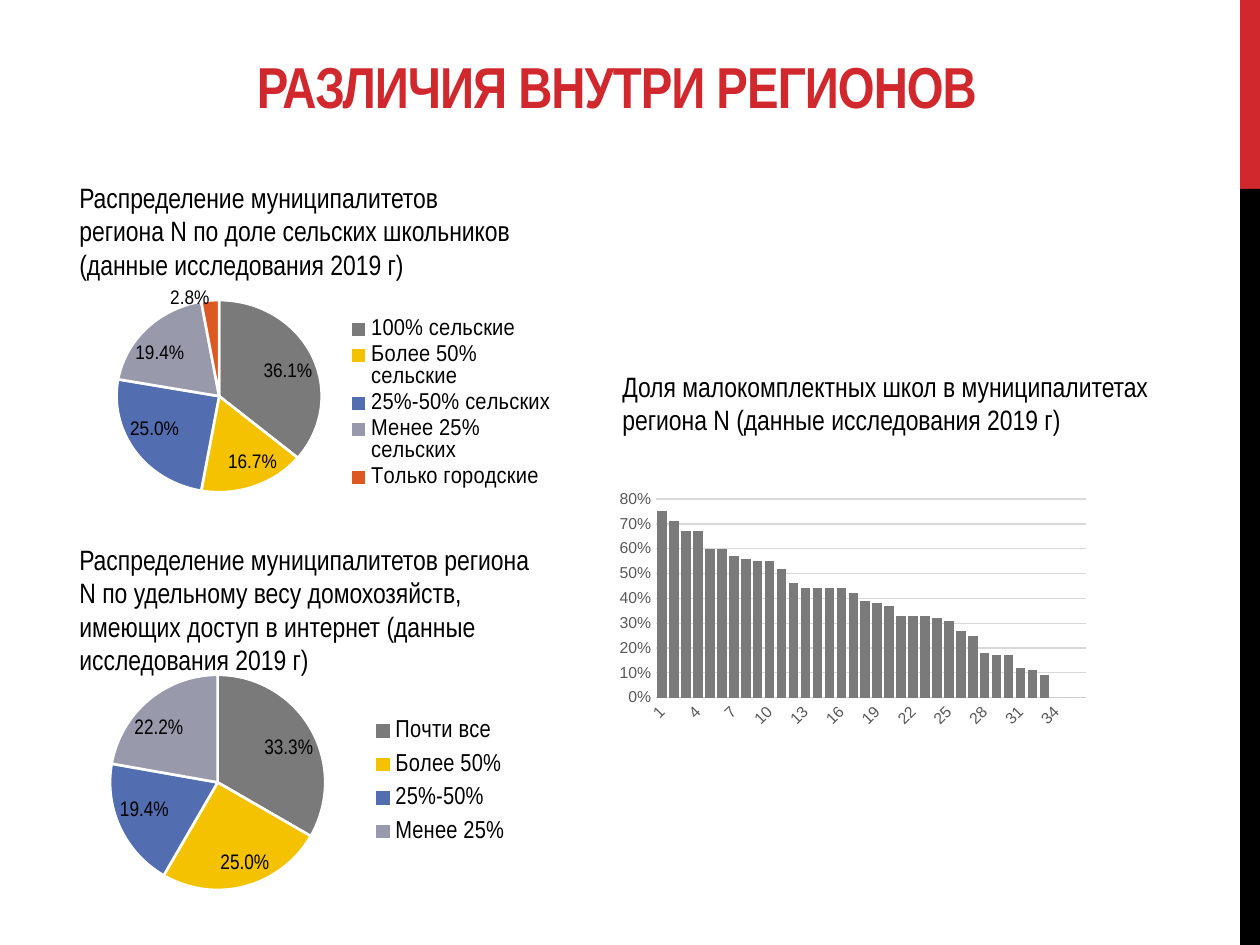
from lxml import etree
from pptx import Presentation
from pptx.chart.data import CategoryChartData
from pptx.dml.color import RGBColor
from pptx.enum.chart import XL_CHART_TYPE, XL_LABEL_POSITION, XL_LEGEND_POSITION, XL_TICK_MARK
from pptx.enum.shapes import MSO_SHAPE
from pptx.enum.text import MSO_ANCHOR, PP_ALIGN
from pptx.oxml.ns import qn
from pptx.util import Emu, Pt

PIE = XL_CHART_TYPE.PIE
COLUMN = XL_CHART_TYPE.COLUMN_CLUSTERED
BEST_FIT = XL_LABEL_POSITION.BEST_FIT
RIGHT = XL_LEGEND_POSITION.RIGHT
NO_TICK = XL_TICK_MARK.NONE
RECTANGLE = MSO_SHAPE.RECTANGLE
BOTTOM = MSO_ANCHOR.BOTTOM
CENTER = PP_ALIGN.CENTER

SCALE = 914400 / 126
NARROW = "Arial Narrow"
RED, BLACK, WHITE = "D1282E", "000000", "FFFFFF"
GRAY, GRID, AXIS_TEXT = "7A7A7A", "D9D9D9", "595959"
SLICES = [GRAY, "F5C201", "526DB0", "989AAC", "DC5924"]


def paint(color, value):
    color.rgb = RGBColor.from_string(value)


def set_layout(parent, index, frame, inner=False):
    for old in parent.findall(qn("c:layout")):
        parent.remove(old)
    layout = etree.Element(qn("c:layout"))
    manual = etree.SubElement(layout, qn("c:manualLayout"))
    settings = [("layoutTarget", "inner")] if inner else []
    settings += [("xMode", "edge"), ("yMode", "edge")]
    settings += zip("xywh", frame)
    for tag, value in settings:
        etree.SubElement(manual, qn("c:" + tag)).set("val", str(value))
    parent.insert(index, layout)


deck = Presentation()
deck.slide_width = Emu(round(1260 * SCALE))
deck.slide_height = Emu(round(945 * SCALE))
page = deck.slides.add_slide(deck.slide_layouts[5])

for top, height, color in [(0, 189, RED), (189, 756, BLACK)]:
    place = [Emu(round(n * SCALE)) for n in (1240, top, 20, height)]
    band = page.shapes.add_shape(RECTANGLE, *place)
    band.shadow.inherit = False
    band.fill.solid()
    paint(band.fill.fore_color, color)
    band.line.fill.background()

title = page.shapes.title
title.left, title.top, title.width, title.height = [
    Emu(round(n * SCALE)) for n in (58, -34, 1118, 160)]
title.text_frame.vertical_anchor = BOTTOM
para = title.text_frame.paragraphs[0]
para.alignment = CENTER
span = para.add_run()
span.text = "РАЗЛИЧИЯ ВНУТРИ РЕГИОНОВ"
span.font.name = NARROW
span.font.size = Pt(33)
span.font.bold = True
paint(span.font.color, RED)
span.font._element.set("spc", "-60")

captions = [
    ((67, 174, 467, 115),
     "Распределение муниципалитетов региона N по доле сельских школьников (данные исследования 2019 г)"),
    ((67, 536, 483, 149),
     "Распределение муниципалитетов региона N по удельному весу домохозяйств, "
     "имеющих доступ в интернет (данные исследования 2019 г)"),
    ((610, 363, 556, 81),
     "Доля малокомплектных школ в муниципалитетах региона N (данные исследования 2019 г)"),
]
for frame, words in captions:
    box = page.shapes.add_textbox(*[Emu(round(n * SCALE)) for n in frame])
    box.text_frame.word_wrap = True
    span = box.text_frame.paragraphs[0].add_run()
    span.text = words
    span.font.name = NARROW
    span.font.size = Pt(16)
    paint(span.font.color, BLACK)

pies = [
    ((55, 275, 513, 228), (0.05, 0.05, 0.54, 0.9), (0.6, 0.12, 0.39, 0.83),
     {"100% сельские": 0.361, "Более 50% сельские": 0.167, "25%-50% сельских": 0.25,
      "Менее 25% сельских": 0.194, "Только городские": 0.028}),
    ((64, 668, 473, 229), (0.04, 0.03, 0.57, 0.94), (0.63, 0.18, 0.33, 0.63),
     {"Почти все": 0.333, "Более 50%": 0.25, "25%-50%": 0.194, "Менее 25%": 0.222}),
]
for frame, plot_frame, legend_frame, shares in pies:
    data = CategoryChartData(number_format="0.0%")
    data.categories = list(shares)
    data.add_series("Series 1", list(shares.values()))
    place = [Emu(round(n * SCALE)) for n in frame]
    chart = page.shapes.add_chart(PIE, *place, data).chart
    chart.has_title = False
    chart.font.name = "Arial"
    chart.font.size = Pt(10)
    chart.has_legend = True
    legend = chart.legend
    legend.position = RIGHT
    legend.include_in_layout = False
    legend.font.name = NARROW
    legend.font.size = Pt(14)
    paint(legend.font.color, BLACK)
    set_layout(legend._element, 1, legend_frame)
    set_layout(chart._chartSpace.chart.plotArea, 0, plot_frame, inner=True)
    plot = chart.plots[0]
    plot.vary_by_categories = True
    for index in range(len(shares)):
        slice_format = plot.series[0].points[index].format
        slice_format.fill.solid()
        paint(slice_format.fill.fore_color, SLICES[index])
        slice_format.line.width = Pt(1.5)
        paint(slice_format.line.color, WHITE)
    plot.has_data_labels = True
    labels = plot.data_labels
    labels.show_value = True
    labels.show_percentage = False
    labels.number_format = "0.0%"
    labels.number_format_is_linked = False
    labels.position = BEST_FIT
    labels.font.name = NARROW
    labels.font.size = Pt(12)
    paint(labels.font.color, BLACK)

school_shares = [
    0.75, 0.71, 0.67, 0.67, 0.6, 0.6, 0.57, 0.56, 0.55, 0.55, 0.52, 0.46,
    0.44, 0.44, 0.44, 0.44, 0.42, 0.39, 0.38, 0.37, 0.33, 0.33, 0.33, 0.32,
    0.31, 0.27, 0.25, 0.18, 0.17, 0.17, 0.12, 0.11, 0.09, 0, 0, 0]
data = CategoryChartData(number_format="0%")
data.categories = [str(number + 1) for number in range(len(school_shares))]
data.add_series("Series 1", school_shares)
place = [Emu(round(n * SCALE)) for n in (610, 485, 486, 248)]
chart = page.shapes.add_chart(COLUMN, *place, data).chart
chart.has_title = False
chart.has_legend = False
chart.font.name = "Arial"
chart.font.size = Pt(10)
plot = chart.plots[0]
plot.vary_by_categories = False
plot.gap_width = 25
plot.overlap = -27
bars = plot.series[0].format
bars.fill.solid()
paint(bars.fill.fore_color, GRAY)

for axis in (chart.category_axis, chart.value_axis):
    axis.major_tick_mark = NO_TICK
    axis.minor_tick_mark = NO_TICK
    axis.tick_labels.font.name = "Arial"
    axis.tick_labels.font.size = Pt(9)
    paint(axis.tick_labels.font.color, AXIS_TEXT)
chart.category_axis._element.find(qn("c:txPr")).find(qn("a:bodyPr")).set("rot", "-2700000")
value_axis = chart.value_axis
value_axis.minimum_scale = 0
value_axis.maximum_scale = 0.8
value_axis.major_unit = 0.1
value_axis.tick_labels.number_format = "0%"
value_axis.tick_labels.number_format_is_linked = False
value_axis.format.line.fill.background()
value_axis.has_major_gridlines = True
for line in (chart.category_axis.format.line, value_axis.major_gridlines.format.line):
    line.width = Pt(0.75)
    paint(line.color, GRID)

deck.save("out.pptx")
